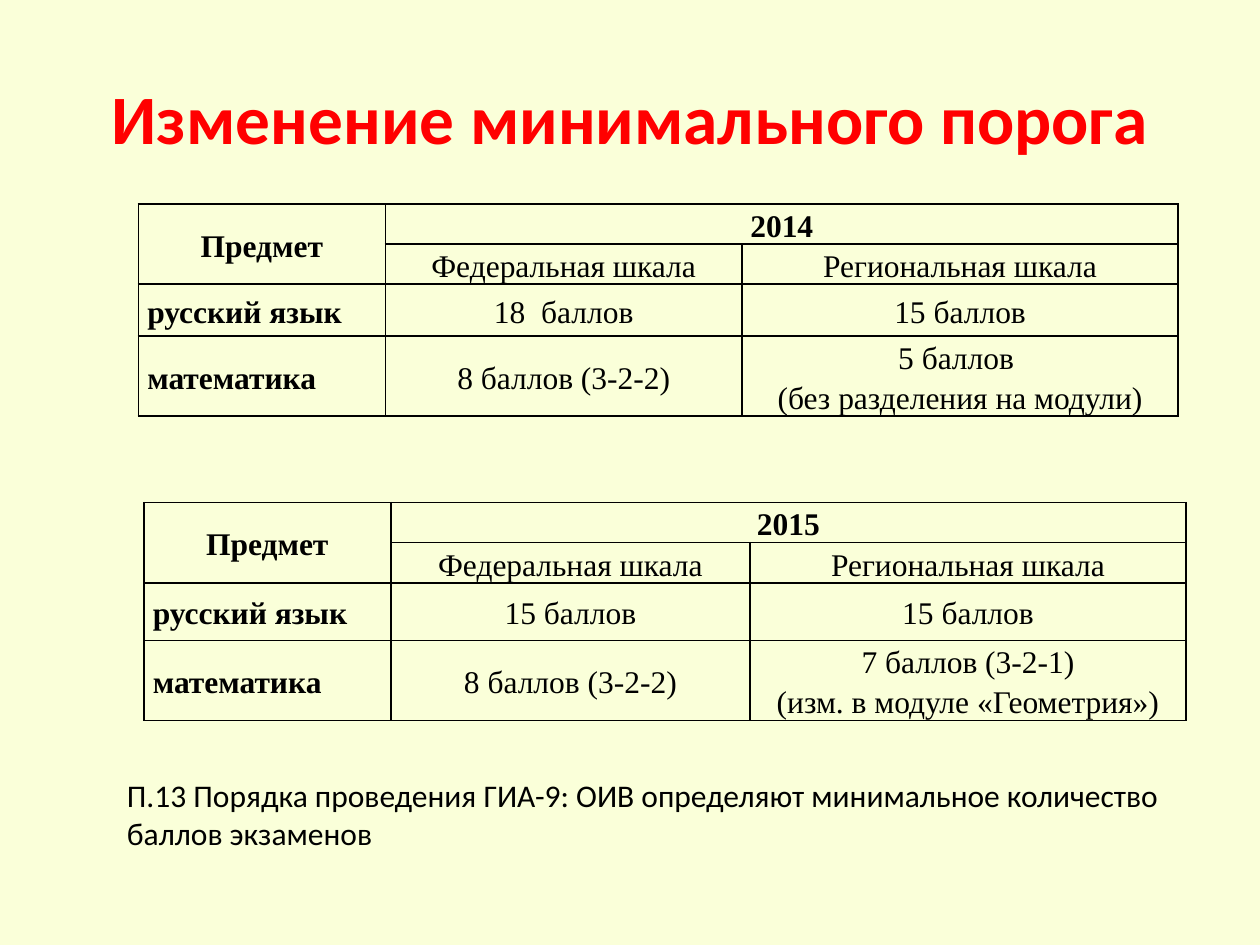
from lxml import etree
from pptx import Presentation
from pptx.dml.color import RGBColor as RGB
from pptx.enum.text import MSO_ANCHOR as ANCHOR, PP_ALIGN as ALIGN
from pptx.oxml.ns import qn
from pptx.util import Cm, Pt

THEME = {
    "bg": RGB.from_string("FAFFD9"),
    "border": "000000",
    "title": {"name": "Calibri", "size": Pt(39.6), "bold": True, "color": RGB(255, 0, 0)},
    "head": {"name": "Times New Roman", "size": Pt(18), "bold": True, "color": RGB(0, 0, 0)},
    "cell": {"name": "Times New Roman", "size": Pt(18), "bold": False, "color": RGB(0, 0, 0)},
    "note": {"name": "Calibri", "size": Pt(18), "bold": False, "color": RGB(0, 0, 0)},
}


def write(p, text, style, align):
    p.text = text
    p.alignment = align
    for r in p.runs:
        for key, value in THEME[style].items():
            if key == "color":
                r.font.color.rgb = value
            else:
                setattr(r.font, key, value)


def outline(cell):
    tcPr = cell._tc.get_or_add_tcPr()
    for side in ("a:lnL", "a:lnR", "a:lnT", "a:lnB"):
        ln = etree.SubElement(tcPr, qn(side), w=str(Pt(1)))
        fill = etree.SubElement(ln, qn("a:solidFill"))
        etree.SubElement(fill, qn("a:srgbClr"), val=THEME["border"])


prs = Presentation()
prs.slide_width, prs.slide_height = Cm(25.4), Cm(19.05)
s = prs.slides.add_slide(prs.slide_layouts[5])
s.background.fill.solid()
s.background.fill.fore_color.rgb = THEME["bg"]

# Title
sp = s.shapes.title
sp.left, sp.top, sp.width, sp.height = Cm(1.27), Cm(0.76), Cm(22.86), Cm(3.18)
sp.text_frame.vertical_anchor = ANCHOR.MIDDLE
write(sp.text_frame.paragraphs[0], "Изменение минимального порога", "title", ALIGN.CENTER)

# Threshold tables: year, position, column widths, subject row height, scores
tables = [
    ("2015", (3.65, 10.13 - 0.0), (4.98, 7.24, 8.79), 1.16,
     ("15 баллов", "15 баллов"),
     ("8 баллов (3-2-2)", "7 баллов (3-2-1)\n(изм. в модуле «Геометрия»)")),
    ("2014", (2.79, 4.11), (4.98, 7.19, 8.79), 1.04,
     ("18  баллов", "15 баллов"),
     ("8 баллов (3-2-2)", "5 баллов \n(без разделения на модули)")),
]
tables[0] = (tables[0][0], (2.9, 10.13), *tables[0][2:])

for year, (left, top), widths, russian_height, russian, maths in tables:
    rows = [
        ("Предмет", year, ""),
        ("", "Федеральная шкала", "Региональная шкала"),
        ("русский язык", *russian),
        ("математика", *maths),
    ]
    heights = (0.81, 0.81, russian_height, 1.61)
    table = s.shapes.add_table(4, 3, Cm(left), Cm(top), Cm(sum(widths)), Cm(sum(heights))).table
    table.first_row = table.horz_banding = False
    for column, width in zip(table.columns, widths):
        column.width = Cm(width)
    for row, height in zip(table.rows, heights):
        row.height = Cm(height)
    table.cell(0, 0).merge(table.cell(1, 0))
    table.cell(0, 1).merge(table.cell(0, 2))

    for i, texts in enumerate(rows):
        for j, text in enumerate(texts):
            cell = table.cell(i, j)
            outline(cell)
            cell.fill.background()
            cell.vertical_anchor = ANCHOR.MIDDLE
            cell.margin_left = cell.margin_right = Cm(0.18)
            cell.margin_top = cell.margin_bottom = 0
            p = cell.text_frame.paragraphs[0]
            p.line_spacing = 1.15
            style = "head" if i == 0 or j == 0 else "cell"
            write(p, text, style, ALIGN.LEFT if i > 1 and j == 0 else ALIGN.CENTER)

# Footnote
tf = s.shapes.add_textbox(Cm(2.31), Cm(15.52), Cm(21.41), Cm(1.8)).text_frame
tf.word_wrap = True
write(tf.paragraphs[0],
      "П.13 Порядка проведения ГИА-9: ОИВ определяют минимальное количество баллов экзаменов",
      "note", ALIGN.LEFT)

prs.save("out.pptx")
